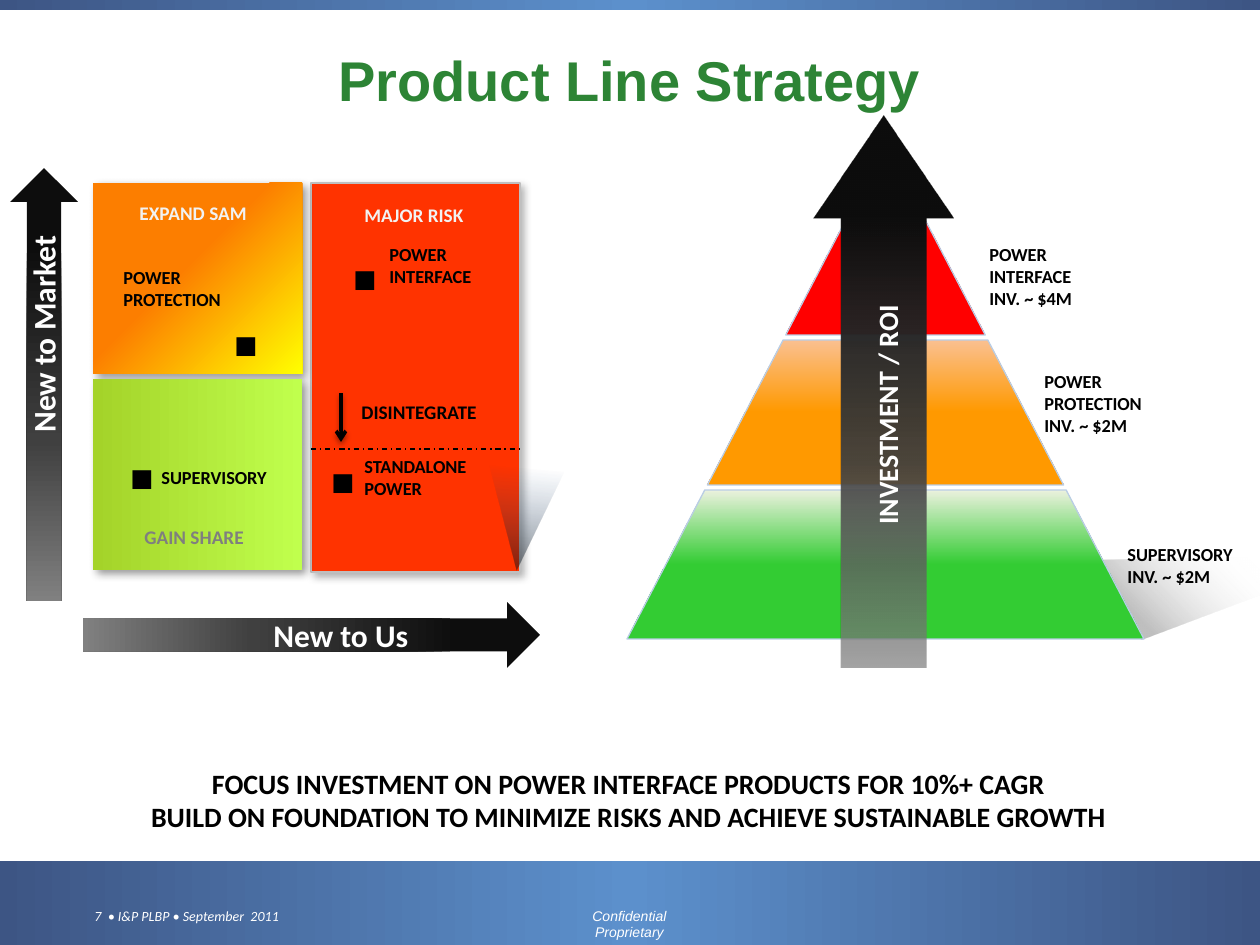
import dataclasses

import pptx
import pptx.dml.color
import pptx.enum.dml
import pptx.enum.shapes
import pptx.enum.text
import pptx.oxml
import pptx.oxml.ns
import pptx.util

PX = 914400 / 126
SHAPE = pptx.enum.shapes.MSO_SHAPE
ALIGN = pptx.enum.text.PP_ALIGN
COLORS = {
    "black": "000000", "white": "FFFFFF", "title": "2D8435",
    "bar edge": "3D5584", "bar middle": "5C90CC",
    "pale": "F2F2F2", "dim": "7F7F7F", "border": "BFBFBF", "tier line": "B9CDE5",
    "risk": "FF3300", "orange": "FC7E00", "yellow": "FFFF00",
    "lime": "A4D329", "light lime": "C0FF4D",
    "fold": "1F497D", "fold dark": "070D13",
    "arrow dark": "0D0D0D", "arrow mid": "404040", "arrow light": "808080",
    "top light": "FF5050", "top": "FF0000", "middle light": "FAC090",
    "middle": "FF9900", "base light": "EBF1DE", "base": "33CC33",
}
ARROW_STOPS = [(18, "arrow dark"), (63, "arrow mid"), (100, "arrow light")]
CELL_SHADOW = ("black", 40, 5, 3, 45)


@dataclasses.dataclass
class Box:
    x: float
    y: float
    w: float
    h: float

    def inner(self, dx, dy, w, h):
        return Box(self.x + dx, self.y + dy, w, h)

    def frame(self, rotation):
        """EMU frame that covers this box once the shape is rotated."""
        x, y, w, h = self.x, self.y, self.w, self.h
        if rotation in (90, 270):
            x, y, w, h = x + (w - h) / 2, y + (h - w) / 2, h, w
        return [emu(v) for v in (x, y, w, h)]


def emu(px):
    return round(px * PX)


def rgb(name):
    return pptx.dml.color.RGBColor.from_string(COLORS[name])


def color_xml(name, alpha=100):
    return f'<a:srgbClr val="{COLORS[name]}"><a:alpha val="{alpha * 1000}"/></a:srgbClr>'


def drawing_xml(body):
    """Parse one DrawingML element whose opening tag has no namespace yet."""
    tag, rest = body.split(" ", 1)
    return pptx.oxml.parse_xml(f"{tag} {pptx.oxml.ns.nsdecls('a')} {rest}")


def set_gradient(shape, stops, angle):
    shape.fill.gradient()
    old = shape._element.spPr.find(pptx.oxml.ns.qn("a:gradFill"))
    marks = "".join(f'<a:gs pos="{pos * 1000}">{color_xml(*color)}</a:gs>' for pos, *color in stops)
    old.getparent().replace(old, drawing_xml(
        f'<a:gradFill rotWithShape="1"><a:gsLst>{marks}</a:gsLst>'
        f'<a:lin ang="{angle * 60000}" scaled="0"/></a:gradFill>'))


def set_shadow(shape, shadow=None):
    """Give a shape or connector an outer shadow, or an empty effect list."""
    properties = shape._element.spPr
    old = properties.find(pptx.oxml.ns.qn("a:effectLst"))
    if old is not None:
        properties.remove(old)
    effect = ""
    if shadow:
        color, alpha, blur, distance, angle = shadow
        effect = (f'<a:outerShdw blurRad="{round(blur * 12700)}" dist="{round(distance * 12700)}" '
                  f'dir="{angle * 60000}" algn="ctr" rotWithShape="0">{color_xml(color, alpha)}</a:outerShdw>')
    properties.append(drawing_xml(f"<a:effectLst >{effect}</a:effectLst>"))


def paint(shape, fill, angle=0, line=None, line_width=0, shadow=None):
    if isinstance(fill, str):
        shape.fill.solid()
        shape.fill.fore_color.rgb = rgb(fill)
    else:
        set_gradient(shape, fill, angle)
    if line:
        shape.line.color.rgb = rgb(line)
        shape.line.width = pptx.util.Pt(line_width)
    else:
        shape.line.fill.background()
    set_shadow(shape, shadow)


def add_preset(slide, kind, box, fill, rotation=0, flip=False, adjustments=(), **look):
    shape = slide.shapes.add_shape(kind, *box.frame(rotation))
    shape.rotation = rotation
    if flip:
        shape._element.spPr.xfrm.set("flipH", "1")
    for index, value in enumerate(adjustments):
        shape.adjustments[index] = value
    paint(shape, fill, **look)


def add_outline(slide, points, fill, **look):
    corners = [(emu(x), emu(y)) for x, y in points]
    builder = slide.shapes.build_freeform(*corners[0], scale=1.0)
    builder.add_line_segments(corners[1:], close=True)
    paint(builder.convert_to_shape(), fill, **look)


def add_line(slide, start, end, width):
    line = slide.shapes.add_connector(
        pptx.enum.shapes.MSO_CONNECTOR.STRAIGHT, *(emu(v) for v in (*start, *end)))
    line.line.color.rgb = rgb("black")
    line.line.width = pptx.util.Pt(width)
    set_shadow(line)
    return line


def write(frame, text, size=10.5, color="black", font="Calibri", bold=True, italic=False, align=None):
    frame.text = text
    for paragraph in frame.paragraphs:
        paragraph.alignment = align
        for run in paragraph.runs:
            run.font.size = pptx.util.Pt(size)
            run.font.name = font
            run.font.bold = bold
            run.font.italic = italic
            run.font.color.rgb = rgb(color)


def add_label(slide, box, text, rotation=0, wrap=True, margin=None, **style):
    label = slide.shapes.add_textbox(*box.frame(rotation))
    label.rotation = rotation
    frame = label.text_frame
    frame.word_wrap = wrap
    frame.auto_size = pptx.enum.text.MSO_AUTO_SIZE.SHAPE_TO_FIT_TEXT
    if margin is not None:
        frame.margin_left = frame.margin_right = emu(margin)
    write(frame, text, **style)


def add_bar(slide, box):
    add_preset(slide, SHAPE.RECTANGLE, box,
               [(0, "bar edge"), (50, "bar middle"), (100, "bar edge")])


def add_footer(slide, box):
    add_bar(slide, box)
    style = dict(size=8, color="white", bold=False, italic=True)
    add_label(slide, box.inner(82, 40, 335, 29), "7  • I&P PLBP • September  2011", **style)
    add_label(slide, box.inner(544, 40, 171, 29), "Confidential Proprietary",
              margin=18, font="Arial", align=ALIGN.CENTER, **style)


def add_title(slide, box):
    title = slide.shapes.title
    title.left, title.top, title.width, title.height = box.frame(0)
    title.text_frame.vertical_anchor = pptx.enum.text.MSO_ANCHOR.MIDDLE
    write(title.text_frame, "Product Line Strategy", size=32, color="title",
          font="Arial", align=ALIGN.CENTER)


def add_matrix(slide, box):
    cell_w, cell_h, right = 209, 191, 218
    turned = dict(rotation=270, flip=True)
    add_preset(slide, SHAPE.RECTANGLE, box.inner(right, 0, cell_w, box.h), "risk", line="border",
               line_width=0.75, shadow=("black", 30, 4.5, 2.6, 53), **turned)
    add_preset(slide, SHAPE.RECTANGLE, box.inner(0, 0, cell_w, cell_h),
               [(0, "orange"), (44, "orange"), (100, "yellow")], angle=45, shadow=CELL_SHADOW, **turned)
    add_preset(slide, SHAPE.RECTANGLE, box.inner(0, cell_h + 5, cell_w, cell_h),
               [(0, "lime"), (100, "light lime")], angle=90, shadow=CELL_SHADOW, **turned)
    for heading, color, *place in [("MAJOR RISK", "pale", 259, 14, 126, 33),
                                   ("DISINTEGRATE", "black", 256, 211, 144, 37),
                                   ("EXPAND SAM", "pale", 34, 12, 135, 37),
                                   ("GAIN SHARE", "dim", 39, 336, 126, 37)]:
        add_label(slide, box.inner(*place), heading, size=11, color=color, wrap=False)
    for product, *place in [("POWER INTERFACE", 284, 54, 111, 57),
                            ("STANDALONE\nPOWER", 259, 266, 168, 57),
                            ("POWER\nPROTECTION", 18, 77, 127, 57),
                            ("SUPERVISORY", 56, 277, 147, 35)]:
        add_label(slide, box.inner(*place), product)
    for dx, dy in [(248, 74), (226, 277), (129, 140), (25, 273)]:
        add_label(slide, box.inner(dx, dy, 66, 43), "■", size=14)
    down = add_line(slide, (box.x + 248, box.y + 210), (box.x + 248, box.y + 259), 2)
    down._element.spPr.get_or_add_ln().append(drawing_xml('<a:tailEnd type="arrow"/>'))
    set_shadow(down, ("black", 38, 3.1, 1.6, 90))
    add_preset(slide, SHAPE.ISOSCELES_TRIANGLE, box.inner(387, 245, 105, 142),
               [(30, "fold", 0), (100, "fold dark", 52)], angle=275, rotation=180, adjustments=[0.65])
    divider = add_line(slide, (box.x + right, box.y + 266), (box.x + box.w, box.y + 266), 0.75)
    divider.line.dash_style = pptx.enum.dml.MSO_LINE.DASH_DOT


def add_pyramid(slide, box):
    center = box.x + box.w / 2
    fold = [(515, 495), (738, 412), (440, 417)]
    add_outline(slide, [(box.x + dx, box.y + dy) for dx, dy in fold],
                [(24, "black", 25), (69, "white", 0)], angle=315)
    for tier, upper, lower in [("top", 0, 191), ("middle", 196, 341), ("base", 346, 495)]:
        corners = [(center + side * dy * box.w / box.h / 2, box.y + dy)
                   for side, dy in [(-1, upper), (-1, lower), (1, lower), (1, upper)]]
        add_outline(slide, corners if upper else corners[:3],
                    [(0, tier + " light"), (50, tier), (100, tier)], angle=90, line="tier line")
    for investment, *place in [("POWER INTERFACE INV. ~ $4M", 350, 93, 111, 79),
                               ("POWER\nPROTECTION INV. ~ $2M", 405, 220, 127, 79),
                               ("SUPERVISORY INV. ~ $2M", 488, 393, 147, 57)]:
        add_label(slide, box.inner(*place), investment)
    add_preset(slide, SHAPE.DOWN_ARROW, box.inner(187, -28, 139, 551),
               [(18, "arrow dark"), (63, "arrow mid", 93), (100, "arrow light", 71)],
               angle=270, rotation=180, adjustments=[0.61, 0.74])
    add_label(slide, box.inner(237, 137, 44, 268), "INVESTMENT / ROI", rotation=270,
              size=16, color="white", align=ALIGN.CENTER)


def add_axis(slide, box, name, name_place, arrow_rotation=0, name_rotation=0):
    add_preset(slide, SHAPE.UP_ARROW, box, ARROW_STOPS, angle=90, rotation=arrow_rotation)
    add_label(slide, box.inner(*name_place), name, rotation=name_rotation, wrap=False,
              size=18, color="white")


def main():
    deck = pptx.Presentation()
    deck.slide_width, deck.slide_height = emu(1260), emu(945)
    slide = deck.slides.add_slide(deck.slide_layouts[5])
    add_footer(slide, Box(0, 861, 1260, 84))
    add_bar(slide, Box(0, 0, 1260, 10))
    add_title(slide, Box(10, 32, 1239, 95))
    add_matrix(slide, Box(93, 183, 427, 389))
    add_pyramid(slide, Box(627, 144, 517, 495))
    add_axis(slide, Box(83, 602, 457, 66), "New to Us", (178, 8, 170, 50), arrow_rotation=90)
    add_axis(slide, Box(10, 168, 68, 433), "New to Market", (8, 53, 50, 224), name_rotation=270)
    add_label(slide, Box(135, 760, 987, 81),
              "FOCUS INVESTMENT ON POWER INTERFACE PRODUCTS FOR 10%+ CAGR\n"
              "BUILD ON FOUNDATION TO MINIMIZE RISKS AND ACHIEVE SUSTAINABLE GROWTH",
              size=16, wrap=False, align=ALIGN.CENTER)
    deck.save("out.pptx")


if __name__ == "__main__":
    main()
